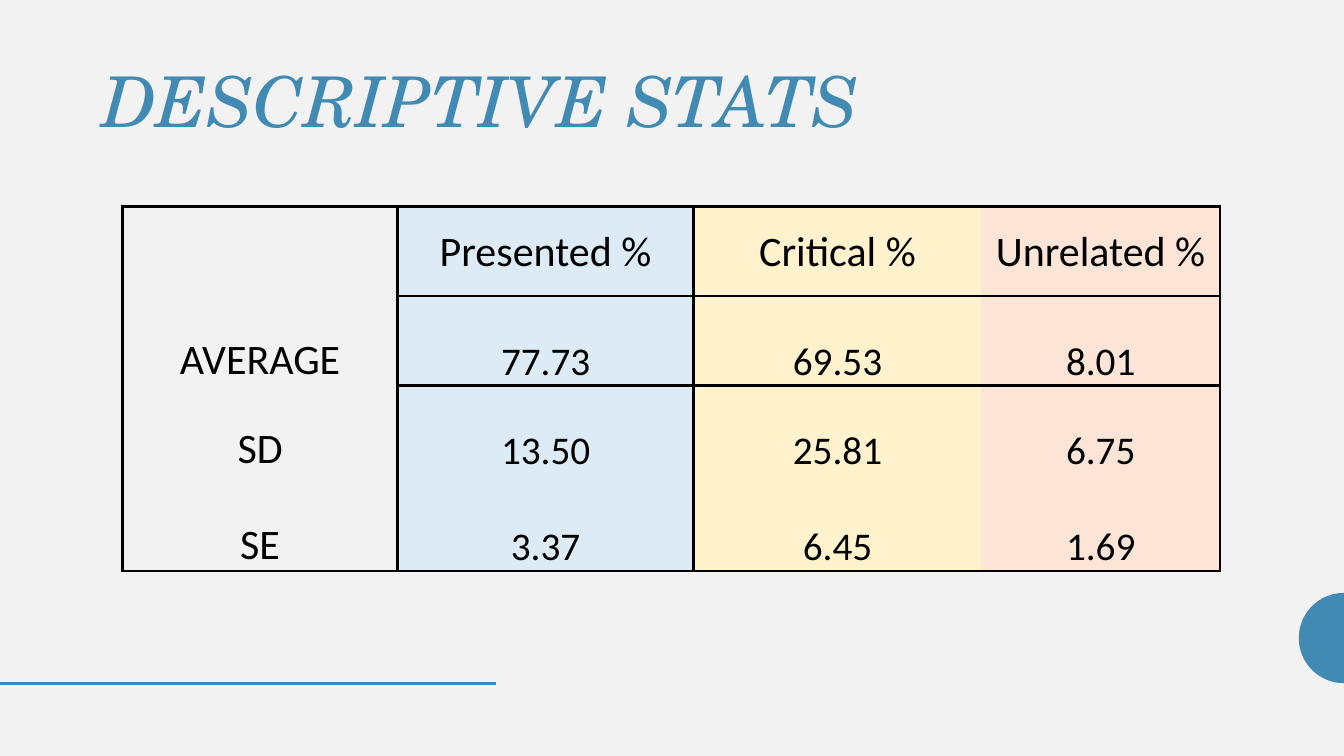
from dataclasses import dataclass
from math import cos, pi, sin

from lxml.etree import SubElement
from pptx import Presentation
from pptx.dml.color import RGBColor as RGB
from pptx.enum.shapes import MSO_CONNECTOR as Connector
from pptx.enum.text import MSO_ANCHOR as Anchor, PP_ALIGN as Align
from pptx.oxml.ns import qn
from pptx.util import Pt


@dataclass(frozen=True)
class Theme:
    background: str = "F2F2F2"
    accent: str = "418AB3"
    ink: str = "000000"
    columns: tuple = (None, "DDEBF7", "FFF2CC", "FCE4D6")
    title_font: str = "TeX Gyre Schola"
    body_font: str = "Calibri"
    title_size: float = 50
    label_size: float = 30
    value_size: float = 28
    rule: float = 2.25
    thin_rule: float = 1


THEME = Theme()
NO_STYLE = "{2D5ABB26-0587-4C30-8999-92F81FD0307C}"
STATS = [
    ("", "Presented %", "Critical %", "Unrelated %"),
    ("AVERAGE", "77.73", "69.53", "8.01"),
    ("SD", "13.50", "25.81", "6.75"),
    ("SE", "3.37", "6.45", "1.69"),
]


def rgb(color):
    return RGB.from_string(color)


def set_font(p, name, size, color, italic=False):
    p.font.name = name
    p.font.size = Pt(size)
    p.font.italic = italic
    p.font.color.rgb = rgb(color)


def add_half_disc(s, right, top, diameter):
    radius, steps = diameter / 2, 48
    points = []
    for i in range(steps + 1):
        angle = pi * i / steps
        points.append((Pt(right - radius * sin(angle)),
                       Pt(top + radius - radius * cos(angle))))
    builder = s.shapes.build_freeform(*points[0], scale=1.0)
    builder.add_line_segments(points[1:], close=True)
    sp = builder.convert_to_shape()
    sp.shadow.inherit = False
    sp.fill.solid()
    sp.fill.fore_color.rgb = rgb(THEME.accent)
    sp.line.fill.background()


def add_footer_rule(s, left, top, width):
    rule = s.shapes.add_connector(Connector.STRAIGHT, Pt(left), Pt(top),
                                  Pt(left + width), Pt(top))
    rule.line.color.rgb = rgb(THEME.accent)
    rule.line.width = Pt(2)
    SubElement(rule._element.spPr, qn("a:effectLst"))


def add_title(s, left, top, width, height, text):
    box = s.shapes.add_textbox(Pt(left), Pt(top), Pt(width), Pt(height))
    tf = box.text_frame
    tf.word_wrap = True
    tf.vertical_anchor = Anchor.TOP
    p = tf.paragraphs[0]
    p.text = text
    p.alignment = Align.RIGHT
    p.line_spacing = 0.9
    set_font(p, THEME.title_font, THEME.title_size, THEME.accent, italic=True)


def set_borders(cell, widths):
    tcPr = cell._tc.get_or_add_tcPr()
    for i, (side, width) in enumerate(widths.items()):
        ln = tcPr.makeelement(qn(f"a:ln{side}"), {"w": str(Pt(width))})
        fill = SubElement(ln, qn("a:solidFill"))
        SubElement(fill, qn("a:srgbClr"), val=THEME.ink)
        tcPr.insert(i, ln)


def border_widths(row, col, last_row, last_col):
    widths = {}
    if col <= 1:
        widths["L"] = THEME.rule
    if col in (0, last_col):
        widths["R"] = THEME.rule if col == 0 else THEME.thin_rule
    if row == 0 or (row == 1 and col > 0):
        widths["T"] = THEME.rule
    if row == last_row or (row == 0 and col > 0):
        widths["B"] = THEME.rule
    return widths


def fill_cell(cell, text, row, col):
    cell.margin_left = cell.margin_right = cell.margin_top = Pt(0.7)
    cell.margin_bottom = 0
    cell.vertical_anchor = Anchor.MIDDLE if row == 0 else Anchor.BOTTOM
    color = THEME.columns[col]
    if color:
        cell.fill.solid()
        cell.fill.fore_color.rgb = rgb(color)
    else:
        cell.fill.background()
    p = cell.text_frame.paragraphs[0]
    p.text = text
    p.alignment = Align.CENTER
    is_label = row == 0 or col == 0
    size = THEME.label_size if is_label else THEME.value_size
    set_font(p, THEME.body_font, size, THEME.ink)


def add_stats_table(s, left, top, col_widths, row_heights):
    frame = s.shapes.add_table(len(STATS), len(STATS[0]), Pt(left), Pt(top),
                               Pt(sum(col_widths)), Pt(sum(row_heights)))
    table = frame.table
    table.first_row = table.horz_banding = False
    table._tbl.tblPr.find(qn("a:tableStyleId")).text = NO_STYLE
    for column, width in zip(table.columns, col_widths):
        column.width = Pt(width)
    for row, height in zip(table.rows, row_heights):
        row.height = Pt(height)
    for i, values in enumerate(STATS):
        for j, text in enumerate(values):
            cell = table.cell(i, j)
            fill_cell(cell, text, i, j)
            set_borders(cell, border_widths(i, j, len(STATS) - 1,
                                            len(values) - 1))


def build_stats_slide(prs):
    s = prs.slides.add_slide(prs.slide_layouts[6])
    s.background.fill.solid()
    s.background.fill.fore_color.rgb = rgb(THEME.background)
    add_half_disc(s, right=960, top=423.5, diameter=64.5)
    add_footer_rule(s, left=0, top=488, width=354)
    add_title(s, 60, 44.5, 561, 74, "DESCRIPTIVE STATS")
    add_stats_table(s, 87.5, 147.5, (196.5, 211.5, 205.5, 170.5),
                    (64, 64, 64, 68.5))


def main():
    prs = Presentation()
    prs.slide_width, prs.slide_height = Pt(960), Pt(540)
    build_stats_slide(prs)
    prs.save("out.pptx")


if __name__ == "__main__":
    main()
